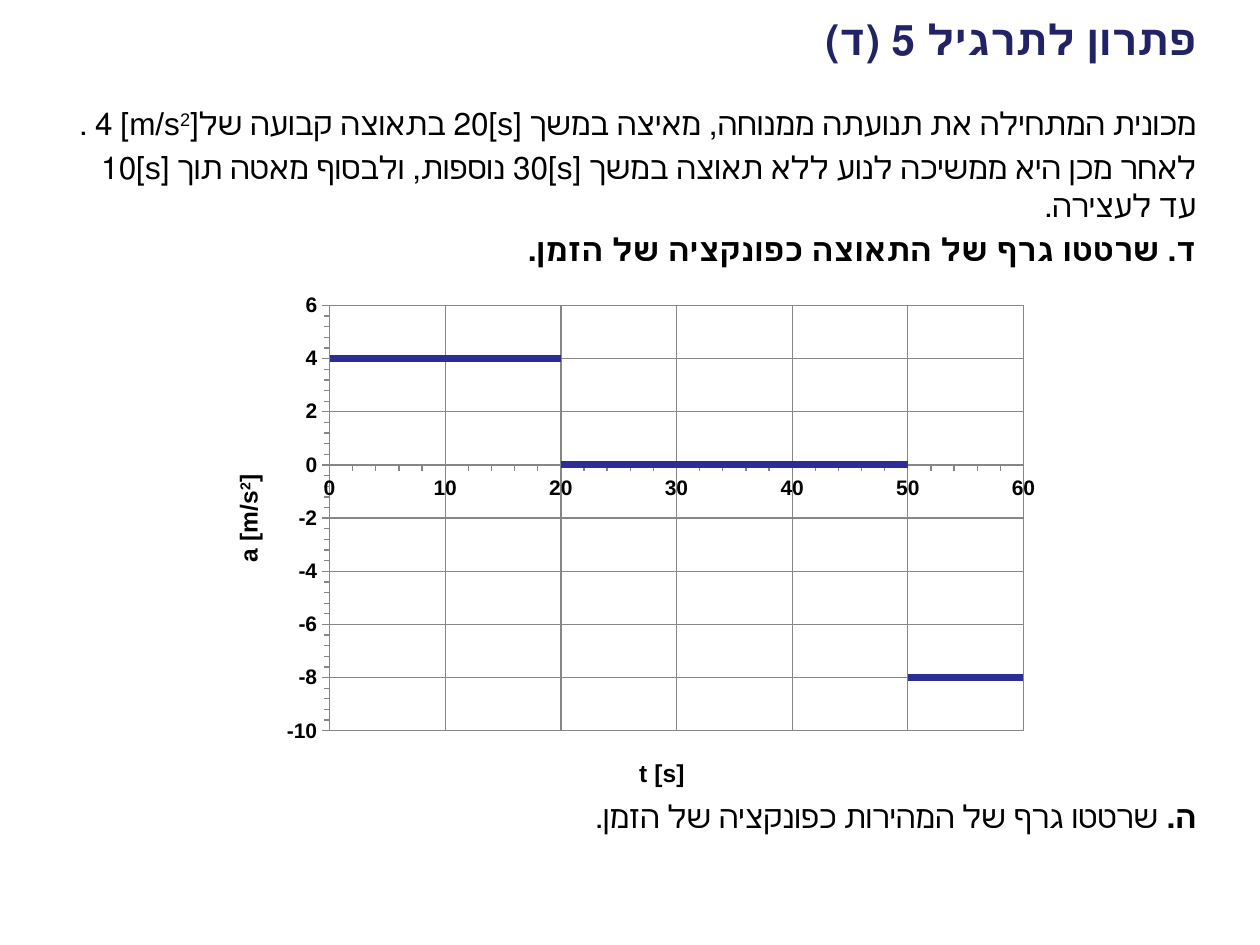
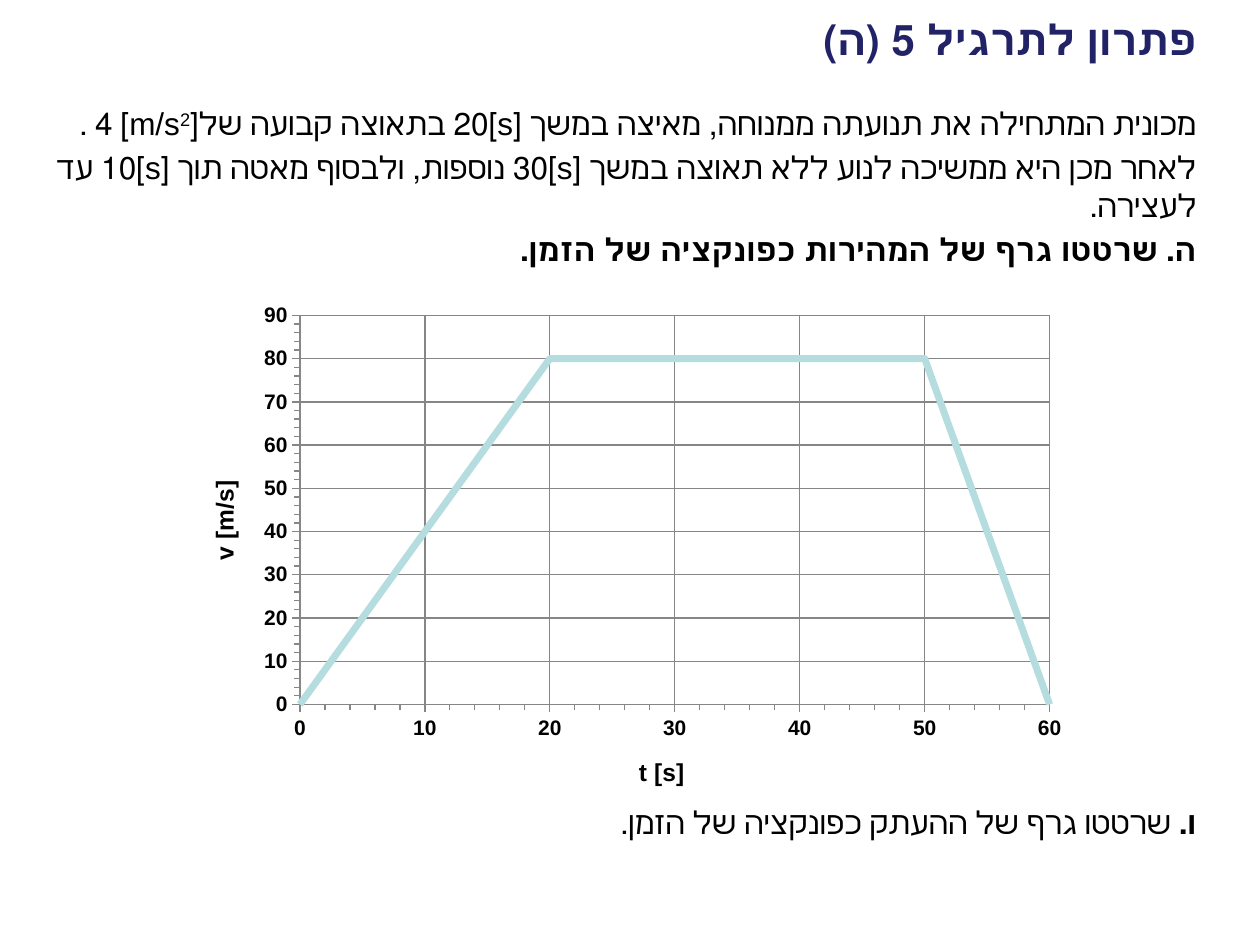
from lxml.etree import SubElement
from pptx import Presentation
from pptx.chart.data import XyChartData
from pptx.dml.color import RGBColor
from pptx.enum.chart import XL_CHART_TYPE, XL_TICK_MARK
from pptx.enum.text import MSO_ANCHOR, MSO_AUTO_SIZE, PP_ALIGN
from pptx.oxml.ns import qn
from pptx.oxml.xmlchemy import OxmlElement
from pptx.util import Cm, Pt

FONT = "Arial"
COLORS = {"title": "222267", "text": "000000", "grid": "868686",
          "acceleration": "2D2D96", "velocity": "B5DDDF"}
RIGHT = 24.37  # right edge of all text, in cm
TIMES = (0, 20, 20, 20, 50, 50, 50, 60)

# Each run is (text, style): "b" is bold, "s" is superscript.
PROBLEM = [
    [("מכונית המתחילה את תנועתה ממנוחה, מאיצה במשך [s]20 בתאוצה קבועה של[m/s", ""),
     ("2", "s"), ("] 4 .", "")],
    [("לאחר מכן היא ממשיכה לנוע ללא תאוצה במשך [s]30 נוספות, "
      "ולבסוף מאטה תוך [s]10 עד לעצירה.", "")],
]

ACCELERATION = {
    "title": "פתרון לתרגיל 5 (ד)",
    "question": [("ד. שרטטו גרף של התאוצה כפונקציה של הזמן.", "b")],
    "next": [("ה. ", "b"), ("שרטטו גרף של המהירות כפונקציה של הזמן.", "")],
    "body_left": 1.09, "next_top": 15.94,
    "box": (4.19, 5.72, 17.04, 10.72),
    "values": (4, 4, None, 0, 0, None, -8, -8),
    "color": "acceleration",
    "y_title": [("a [m/s", "b"), ("2", "bs"), ("]", "b")],
    "y_scale": (-10, 6, 2),
    "plot": (0.144, 0.041, 0.821, 0.8),
}
VELOCITY = {
    "title": "פתרון לתרגיל 5 (ה)",
    "question": [("ה. שרטטו גרף של המהירות כפונקציה של הזמן.", "b")],
    "next": [("ו.", "b"), (" שרטטו גרף של ההעתק כפונקציה של הזמן.", "")],
    "body_left": 0.36, "next_top": 16.07,
    "box": (3.66, 5.92, 18.08, 10.46),
    "values": (0, 80, 80, 80, 80, 80, 80, 0),
    "color": "velocity",
    "y_title": [("v [m/s]", "b")],
    "y_scale": (0, 90, 10),
    "plot": (0.132, 0.042, 0.836, 0.75),
}


def rgb(name):
    return RGBColor.from_string(COLORS[name])


def add_runs(p, runs, size, color="text"):
    for text, style in runs:
        r = p.add_run()
        r.text = text
        r.font.size = Pt(size)
        r.font.bold = "b" in style
        r.font.color.rgb = rgb(color)
        r.font.name = FONT
        if "s" in style:
            r._r.get_or_add_rPr().set("baseline", "30000")


def set_rtl(p):
    p.alignment = PP_ALIGN.RIGHT
    p._p.get_or_add_pPr().set("rtl", "1")


def add_title(slide, text):
    sp = slide.shapes.title
    sp.left, sp.top, sp.width, sp.height = Cm(3.02), Cm(0.28), Cm(RIGHT - 3.02), Cm(0.99)
    tf = sp.text_frame
    tf.auto_size = MSO_AUTO_SIZE.NONE
    tf.vertical_anchor = MSO_ANCHOR.MIDDLE
    p = tf.paragraphs[0]
    set_rtl(p)
    add_runs(p, [(text, "b")], 24, "title")


def add_text(slide, left, top, height, paragraphs):
    """Right-to-left text box that ends at the shared right edge."""
    sp = slide.shapes.add_textbox(Cm(left), Cm(top), Cm(RIGHT - left), Cm(height))
    tf = sp.text_frame
    tf.word_wrap = True
    for i, runs in enumerate(paragraphs):
        p = tf.add_paragraph() if i else tf.paragraphs[0]
        set_rtl(p)
        if i:
            p.space_before = Pt(3.6)
        add_runs(p, runs, 18)


def set_layout(parent, index, **values):
    """Place a chart part by fractions of the chart area."""
    layout = parent.find(qn("c:layout"))
    if layout is None:
        layout = OxmlElement("c:layout")
        parent.insert(index, layout)
    manual = SubElement(layout, qn("c:manualLayout"))
    for tag, value in values.items():
        SubElement(manual, qn("c:" + tag)).set("val", str(value))


def format_axis(axis, low, high, step, title, x, y):
    axis.minimum_scale, axis.maximum_scale = low, high
    axis.major_unit, axis.minor_unit = step, step / 5
    axis.major_tick_mark = axis.minor_tick_mark = XL_TICK_MARK.OUTSIDE
    axis.has_major_gridlines = True
    for line in (axis.format.line, axis.major_gridlines.format.line):
        line.color.rgb = rgb("grid")
        line.width = Pt(0.75)
    font = axis.tick_labels.font
    font.size, font.bold = Pt(12), True
    axis.tick_labels.number_format = "General"
    axis.tick_labels.number_format_is_linked = False
    axis.has_title = True
    add_runs(axis.axis_title.text_frame.paragraphs[0], title, 14)
    set_layout(axis.axis_title._element, 1, xMode="edge", yMode="edge", x=x, y=y)


def add_motion_chart(slide, spec):
    data = XyChartData()
    series = data.add_series("Series 1")
    for t, value in zip(TIMES, spec["values"]):
        series.add_data_point(t, value)
    chart = slide.shapes.add_chart(XL_CHART_TYPE.XY_SCATTER_LINES_NO_MARKERS,
                                   *map(Cm, spec["box"]), data).chart
    # A point without a value is a gap in the line.
    for pt in list(chart._chartSpace.iter(qn("c:pt"))):
        if pt.find(qn("c:v")).text in (None, "", "None"):
            pt.getparent().remove(pt)

    chart.has_legend = chart.has_title = False
    chart.font.size, chart.font.name = Pt(10), FONT
    chart.font.color.rgb = rgb("text")
    plot = chart.plots[0]
    plot.vary_by_categories = False
    line = plot.series[0]
    line.smooth = False
    line.format.line.color.rgb = rgb(spec["color"])
    line.format.line.width = Pt(4)

    format_axis(chart.category_axis, 0, 60, 10, [("t [s]", "b")], 0.505, 0.883)
    format_axis(chart.value_axis, *spec["y_scale"], spec["y_title"], 0.025, 0.351)
    body = chart.value_axis.axis_title.text_frame._txBody.find(qn("a:bodyPr"))
    body.set("rot", "-5400000")
    body.set("vert", "horz")
    x, y, w, h = spec["plot"]
    set_layout(chart._chartSpace.chart.plotArea, 0, layoutTarget="inner",
               xMode="edge", yMode="edge", x=x, y=y, w=w, h=h)


def add_solution_slide(prs, spec):
    slide = prs.slides.add_slide(prs.slide_layouts[5])
    add_title(slide, spec["title"])
    add_text(slide, spec["body_left"], 1.98, 3.5, PROBLEM + [spec["question"]])
    add_motion_chart(slide, spec)
    add_text(slide, spec["body_left"], spec["next_top"], 1, [spec["next"]])


def main():
    prs = Presentation()
    prs.slide_width, prs.slide_height = Cm(25.4), Cm(19.05)
    for spec in (ACCELERATION, VELOCITY):
        add_solution_slide(prs, spec)
    prs.save("out.pptx")


if __name__ == "__main__":
    main()
